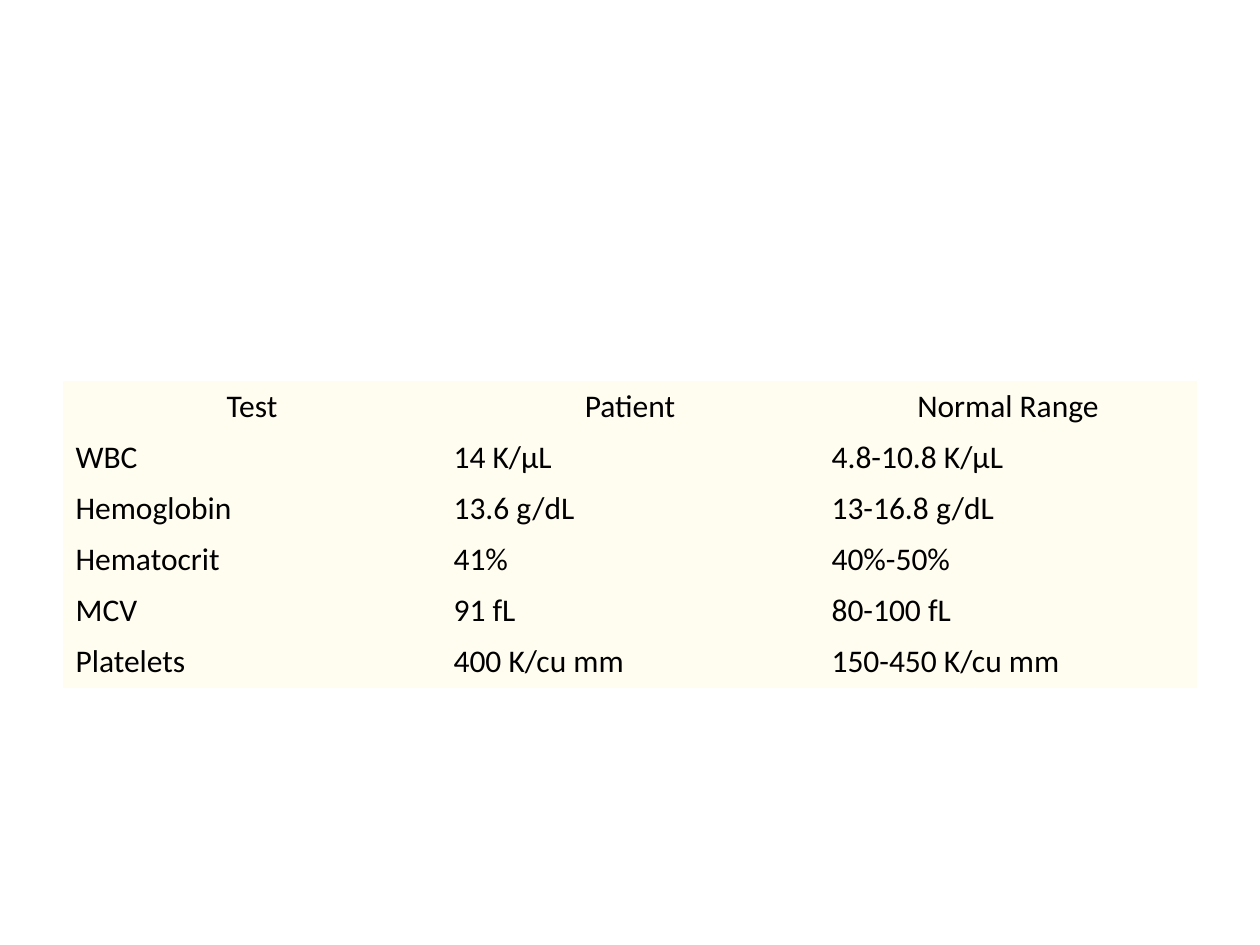
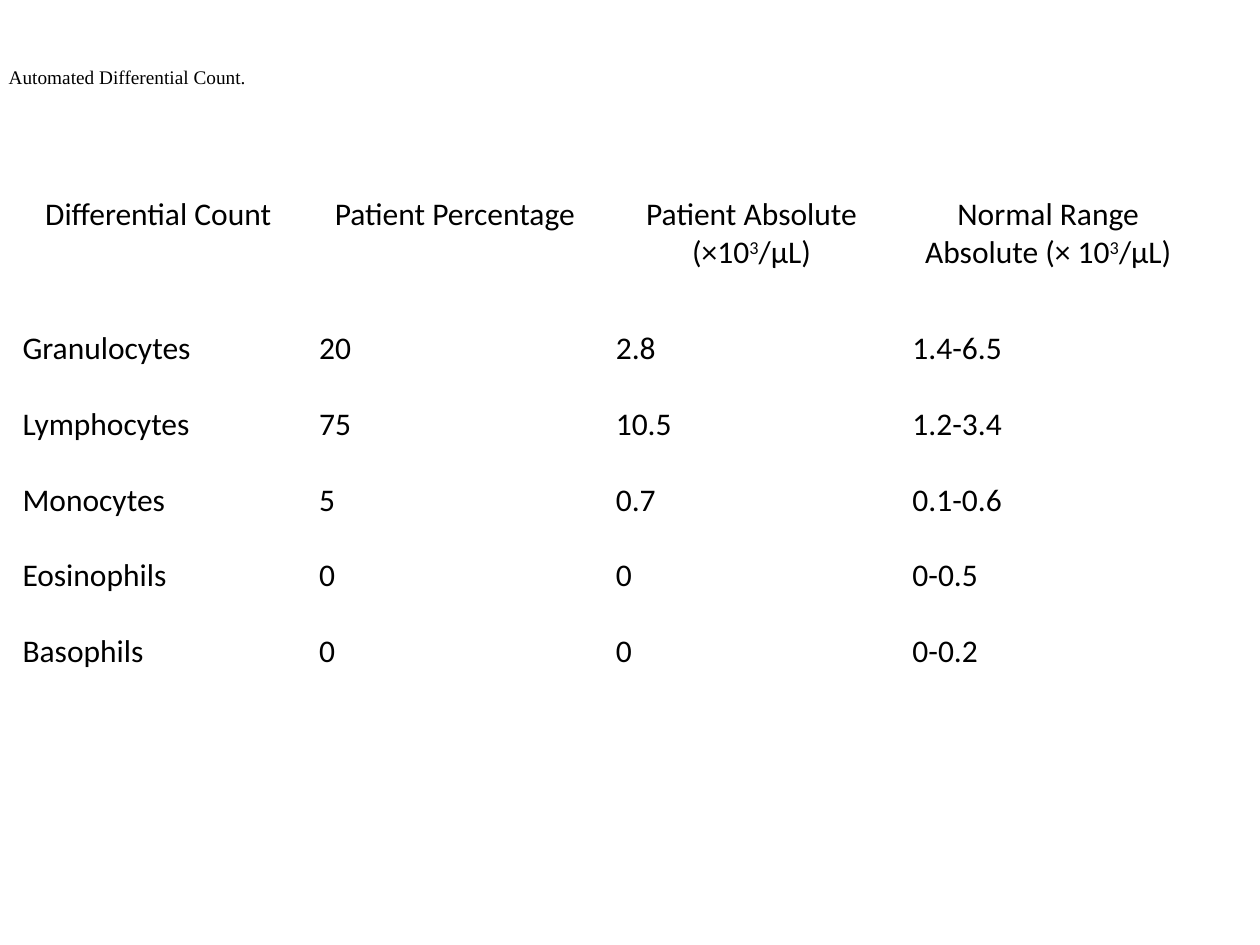
import dataclasses
import typing

import pptx
import pptx.dml.color
import pptx.enum.text
import pptx.slide
import pptx.text.text
import pptx.util
from pptx.util import Cm

Align = pptx.enum.text.PP_ALIGN
Anchor = pptx.enum.text.MSO_ANCHOR


@dataclasses.dataclass(frozen=True)
class Theme:
    ink: str = "000000"
    cream: str = "FFFCF0"
    body: str = "Calibri"
    serif: str = "Times New Roman"
    size: float = 18
    small: float = 11
    raised: str = "30000"
    plain: str = "{2D5ABB26-0587-4C30-8999-92F81FD0307C}"


@dataclasses.dataclass(frozen=True)
class Grid:
    left: float
    top: float
    wide: float
    head: float
    high: float
    rows: tuple[tuple[str, ...], ...]
    fill: typing.Optional[str] = None


THEME = Theme()

BLOOD = Grid(
    left=1.27, top=7.68, wide=7.62, head=1.03, high=1.03, fill=THEME.cream,
    rows=(
        ("Test", "Patient", "Normal Range"),
        ("WBC", "14 K/µL", "4.8-10.8 K/µL"),
        ("Hemoglobin", "13.6 g/dL", "13-16.8 g/dL"),
        ("Hematocrit", "41%", "40%-50%"),
        ("MCV", "91 fL", "80-100 fL"),
        ("Platelets", "400 K/cu mm", "150-450 K/cu mm"),
    ),
)

COUNT = Grid(
    left=0.2, top=3.81, wide=5.98, head=2.7, high=1.53,
    rows=(
        ("Differential Count", "Patient Percentage",
         "Patient Absolute (×10^3^/µL)",
         "Normal Range Absolute (× 10^3^/µL)"),
        ("Granulocytes", "20", "2.8", "1.4-6.5"),
        ("Lymphocytes", "75", "10.5", "1.2-3.4"),
        ("Monocytes", "5", "0.7", "0.1-0.6"),
        ("Eosinophils", "0", "0", "0-0.5"),
        ("Basophils", "0", "0", "0-0.2"),
    ),
)


def write(frame: pptx.text.text.TextFrame, text: str, *,
          font: str = THEME.body, size: float = THEME.size,
          color: str = THEME.ink, align: Align = Align.LEFT) -> None:
    line = frame.paragraphs[0]
    line.alignment = align
    for index, part in enumerate(text.split("^")):
        run = line.add_run()
        run.text = part
        run.font.name = font
        run.font.size = pptx.util.Pt(size)
        run.font.bold = False
        run.font.color.rgb = pptx.dml.color.RGBColor.from_string(color)
        if index % 2:
            run._r.get_or_add_rPr().set("baseline", THEME.raised)


def draw(slide: pptx.slide.Slide, grid: Grid) -> None:
    lines, cols = len(grid.rows), len(grid.rows[0])
    total = grid.head + grid.high * (lines - 1)
    table = slide.shapes.add_table(
        lines, cols, Cm(grid.left), Cm(grid.top),
        Cm(grid.wide * cols), Cm(total)).table
    table.horz_banding = False
    table._tbl.tblPr[0].text = THEME.plain
    for col in table.columns:
        col.width = Cm(grid.wide)
    for y, row in enumerate(grid.rows):
        table.rows[y].height = Cm(grid.high if y else grid.head)
        for x, text in enumerate(row):
            cell = table.cell(y, x)
            if grid.fill:
                cell.fill.solid()
                cell.fill.fore_color.rgb = pptx.dml.color.RGBColor.from_string(grid.fill)
            else:
                cell.fill.background()
            write(cell.text_frame, text, align=Align.LEFT if y else Align.CENTER)


def name(slide: pptx.slide.Slide, text: str) -> None:
    title = slide.shapes.title
    title.left, title.top = Cm(-0.08), Cm(1.27)
    title.width, title.height = Cm(25.4), Cm(1.27)
    frame = title.text_frame
    frame.word_wrap = True
    frame.auto_size = pptx.enum.text.MSO_AUTO_SIZE.NONE
    frame.vertical_anchor = Anchor.TOP
    frame.margin_top = Cm(0.05)
    write(frame, text, font=THEME.serif, size=THEME.small)


def main() -> None:
    deck = pptx.Presentation()
    deck.slide_width, deck.slide_height = Cm(25.4), Cm(19.05)
    draw(deck.slides.add_slide(deck.slide_layouts[6]), BLOOD)
    slide = deck.slides.add_slide(deck.slide_layouts[5])
    draw(slide, COUNT)
    name(slide, "Automated Differential Count.")
    deck.save("out.pptx")


if __name__ == "__main__":
    main()
